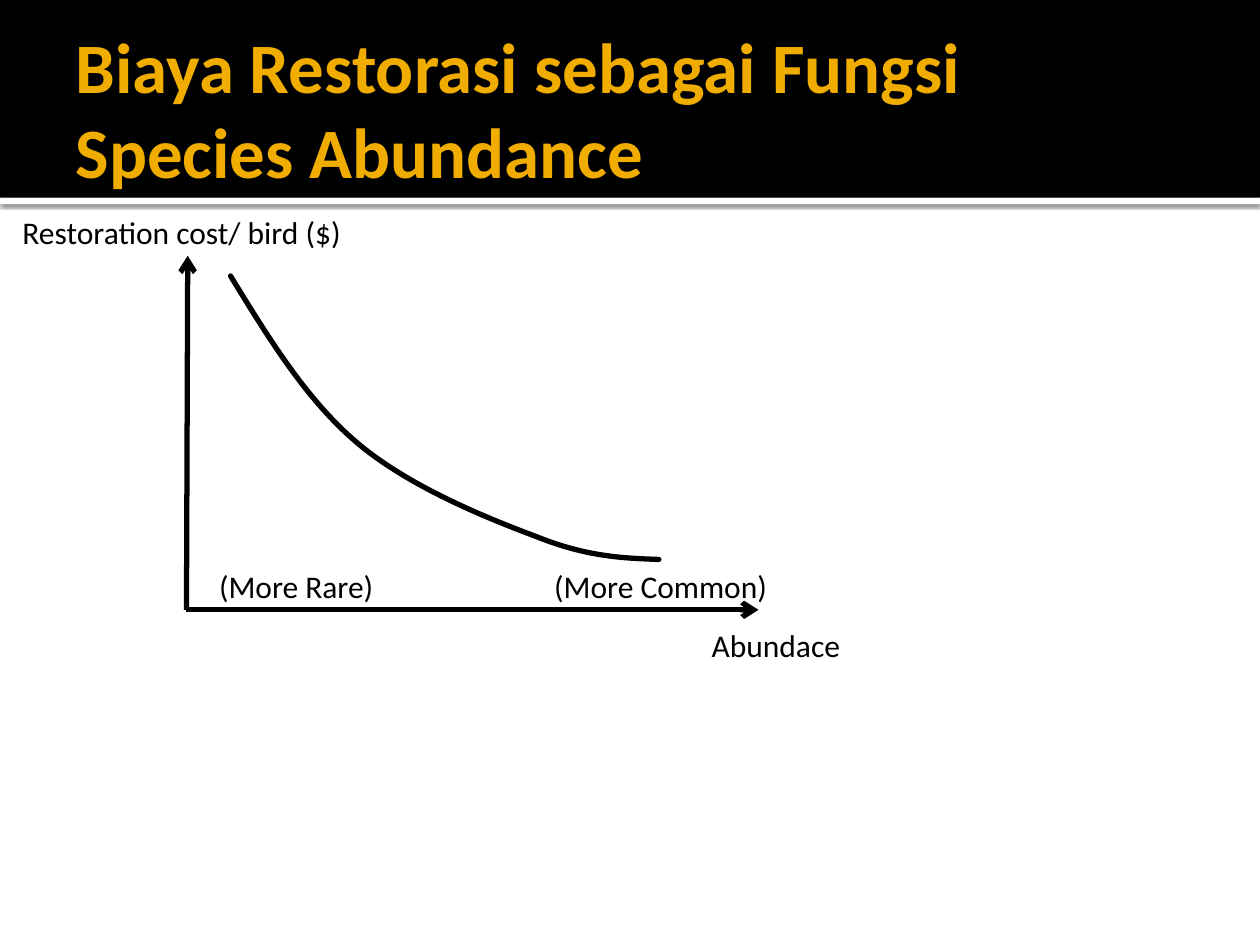
from dataclasses import dataclass

from lxml import etree
from pptx import Presentation
from pptx.dml.color import RGBColor
from pptx.enum.shapes import MSO_CONNECTOR, MSO_SHAPE
from pptx.enum.text import MSO_ANCHOR, MSO_AUTO_SIZE, PP_ALIGN
from pptx.oxml import parse_xml
from pptx.oxml.ns import nsdecls, qn
from pptx.util import Inches, Pt

RECTANGLE = MSO_SHAPE.RECTANGLE
STRAIGHT = MSO_CONNECTOR.STRAIGHT
MIDDLE = MSO_ANCHOR.MIDDLE
LEFT = PP_ALIGN.LEFT
NO_FIT, GROW = MSO_AUTO_SIZE.NONE, MSO_AUTO_SIZE.SHAPE_TO_FIT_TEXT
TITLE_ONLY = 5


@dataclass(frozen=True)
class Theme:
    font: str = "Calibri"
    ink: RGBColor = RGBColor(0, 0, 0)
    paper: RGBColor = RGBColor(255, 255, 255)
    accent: RGBColor = RGBColor(0xF0, 0xAD, 0x00)
    title_size: Pt = Pt(40.5)
    label_size: Pt = Pt(18)
    line_width: Pt = Pt(3)


THEME = Theme()

ORIGIN = (1.48, 4.84)
AXIS_ENDS = [(1.49, 2.03), (6.02, 4.84)]

# Start of the cost curve, then three control points per Bézier segment
CURVE = [
    (1.83, 2.19),
    (2.13, 2.68), (2.43, 3.17), (2.83, 3.51),
    (3.24, 3.86), (3.86, 4.11), (4.26, 4.26),
    (4.66, 4.42), (4.95, 4.43), (5.23, 4.44),
]

# Text, left, top, width
LABELS = [
    ("Restoration cost/ bird ($)", 0.08, 1.64, 2.77),
    ("Abundace", 5.55, 4.92, 1.31),
    ("(More Rare)", 1.64, 4.45, 1.43),
    ("(More Common)", 4.3, 4.45, 1.91),
]


def style_font(paragraph, size, color, bold=False):
    font = paragraph.font
    font.name, font.size, font.bold = THEME.font, size, bold
    font.color.rgb = color


def style_line(shape):
    shape.line.color.rgb = THEME.ink
    shape.line.width = THEME.line_width


def add_band(slide, top, height, color):
    band = slide.shapes.add_shape(
        RECTANGLE, 0, Inches(top), Inches(10), Inches(height))
    band.shadow.inherit = False
    band.fill.solid()
    band.fill.fore_color.rgb = color
    band.line.fill.background()
    return band


def add_drop_shadow(shape):
    effects = shape.element.spPr.find(qn("a:effectLst"))
    effects.append(parse_xml(
        f'<a:outerShdw {nsdecls("a")} blurRad="31750" dist="10160" dir="5400000" '
        'rotWithShape="0"><a:srgbClr val="000000"><a:alpha val="60000"/>'
        '</a:srgbClr></a:outerShdw>'))


def set_title(slide, text):
    title = slide.shapes.title
    title.left, title.top = Inches(0.5), Inches(0.17)
    title.width, title.height = Inches(9), Inches(1.37)
    frame = title.text_frame
    frame.text = text
    frame.auto_size = NO_FIT
    frame.vertical_anchor = MIDDLE
    frame.margin_left = Inches(0.1)
    frame.margin_right = frame.margin_top = frame.margin_bottom = Inches(0.05)
    paragraph = frame.paragraphs[0]
    paragraph.alignment = LEFT
    style_font(paragraph, THEME.title_size, THEME.accent, bold=True)
    # Bring the title in front of the bands
    slide.shapes.element.append(title.element)


def add_axis(slide, start, end):
    axis = slide.shapes.add_connector(
        STRAIGHT, *(Inches(value) for value in start + end))
    style_line(axis)
    etree.SubElement(axis.line._get_or_add_ln(), qn("a:tailEnd"), type="arrow")
    etree.SubElement(axis.element.spPr, qn("a:effectLst"))


def add_curve(slide, points):
    start, *controls = [(Inches(x), Inches(y)) for x, y in points]
    builder = slide.shapes.build_freeform(*start)
    builder.add_line_segments(controls, close=False)
    curve = builder.convert_to_shape()
    curve.shadow.inherit = False
    curve.fill.background()
    style_line(curve)
    curve.line._get_or_add_ln().set("cap", "rnd")

    # Merge every three line segments into one cubic Bézier segment
    segments = list(curve.element.iter(qn("a:lnTo")))
    for first in range(0, len(segments), 3):
        bezier = etree.Element(qn("a:cubicBezTo"))
        segments[first].addprevious(bezier)
        for segment in segments[first:first + 3]:
            bezier.append(segment[0])
            segment.getparent().remove(segment)


def add_label(slide, text, left, top, width):
    label = slide.shapes.add_textbox(
        Inches(left), Inches(top), Inches(width), Inches(0.4))
    frame = label.text_frame
    frame.text = text
    frame.word_wrap = False
    frame.auto_size = GROW
    style_font(frame.paragraphs[0], THEME.label_size, THEME.ink)


def main():
    presentation = Presentation()
    presentation.slide_width, presentation.slide_height = Inches(10), Inches(7.5)
    slide = presentation.slides.add_slide(presentation.slide_layouts[TITLE_ONLY])

    # Header
    add_drop_shadow(add_band(slide, 1.57, 0.05, THEME.paper))
    add_band(slide, 0, 1.57, THEME.ink)
    set_title(slide, "Biaya Restorasi sebagai Fungsi Species Abundance")

    # Cost diagram
    for end in AXIS_ENDS:
        add_axis(slide, ORIGIN, end)
    add_curve(slide, CURVE)
    for label in LABELS:
        add_label(slide, *label)

    presentation.save("out.pptx")


if __name__ == "__main__":
    main()
